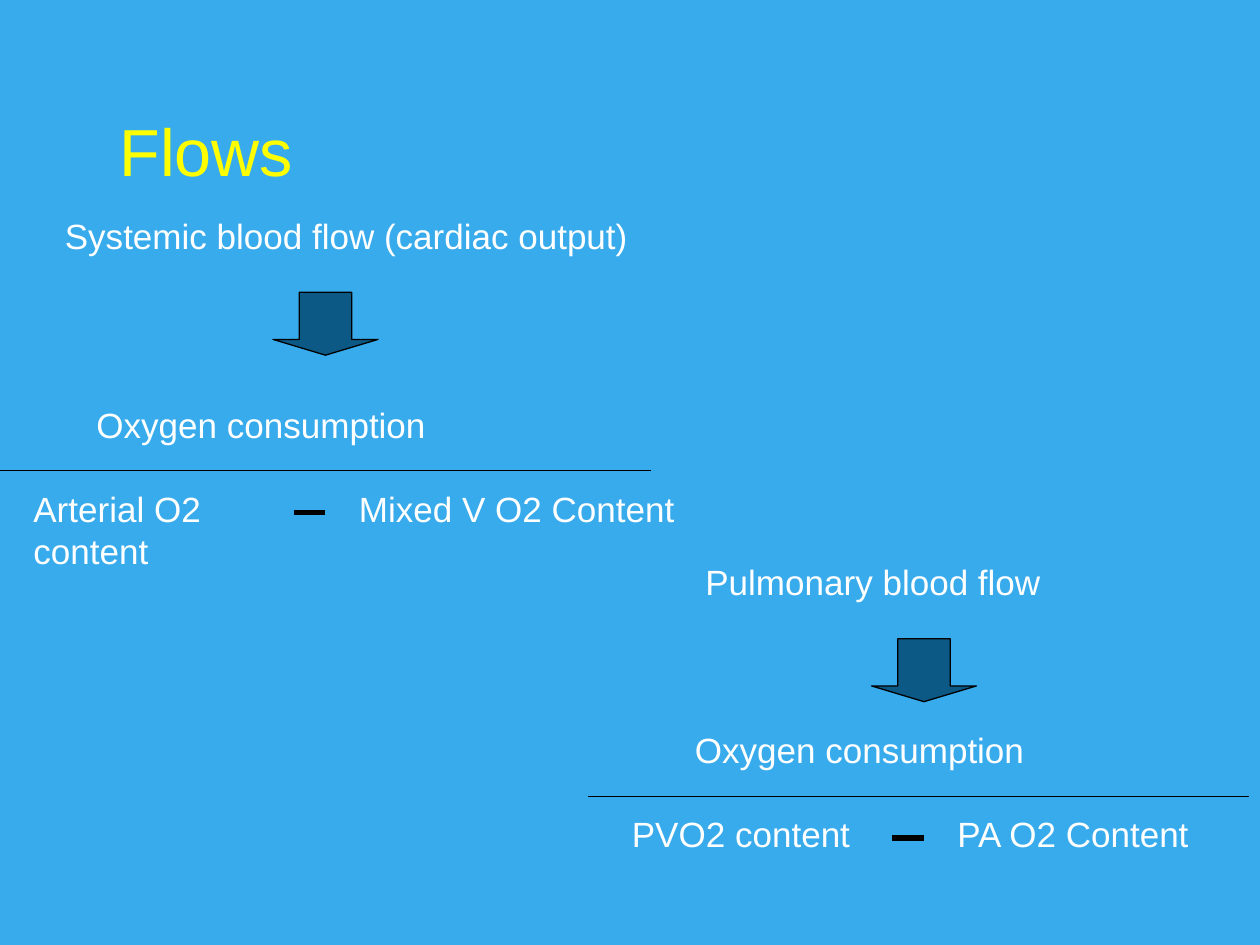
from dataclasses import dataclass

from pptx import Presentation
from pptx import util as u
from pptx.dml.color import RGBColor
from pptx.enum import shapes, text
from pptx.oxml.ns import qn
from pptx.slide import Slide
from lxml import etree

COLOURS = {
    "background": "38ABED",
    "title": "FFFF00",
    "body": "FFFFFF",
    "arrow": "0C5986",
    "line": "000000",
}
LABEL_HEIGHT = 31


@dataclass
class Flow:
    """A flow heading above its fraction; lengths are in points."""
    heading: str
    heading_left: float
    heading_top: float
    heading_width: float
    bar_left: float
    bar_top: float
    minuend: str
    subtrahend: str
    minuend_lines: int = 1


FLOWS = [
    Flow("Pulmonary blood flow", 396, 316.8, 288, 336, 455,
         "PVO2 content", "PA O2 Content"),
    Flow("Systemic blood flow (cardiac output)", 30, 118.8, 360, -6, 268.8,
         "Arterial O2 content", "Mixed V O2 Content", 2),
]


def colour(name: str) -> RGBColor:
    return RGBColor.from_string(COLOURS[name])


def add_label(page: Slide, words: str, left: float, top: float, width: float,
              height: float = LABEL_HEIGHT, size: float = 20,
              ink: str = "body", anchor=text.MSO_ANCHOR.TOP) -> None:
    box = page.shapes.add_textbox(u.Pt(left), u.Pt(top), u.Pt(width), u.Pt(height))
    frame = box.text_frame
    for key, value in {"word_wrap": True, "vertical_anchor": anchor}.items():
        setattr(frame, key, value)
    span = frame.paragraphs[0].add_run()
    span.text = words
    for key, value in {"name": "Arial", "size": u.Pt(size)}.items():
        setattr(span.font, key, value)
    span.font.color.rgb = colour(ink)


def add_rule(page: Slide, left: float, top: float, length: float,
             weight: float) -> None:
    rule = page.shapes.add_connector(
        shapes.MSO_CONNECTOR.STRAIGHT,
        u.Pt(left), u.Pt(top), u.Pt(left + length), u.Pt(top))
    rule.line.color.rgb = colour("line")
    rule.line.width = u.Pt(weight)
    etree.SubElement(rule._element.spPr, qn("a:effectLst"))


def add_arrow(page: Slide, left: float, top: float) -> None:
    arrow = page.shapes.add_shape(
        shapes.MSO_SHAPE.DOWN_ARROW, u.Pt(left), u.Pt(top), u.Pt(60), u.Pt(36))
    arrow.shadow.inherit = False
    arrow.adjustments[0] = 0.5
    arrow.adjustments[1] = 0.25
    arrow.fill.solid()
    arrow.fill.fore_color.rgb = colour("arrow")
    arrow.line.color.rgb = colour("line")
    arrow.line.width = u.Pt(0.75)


def add_flow(page: Slide, flow: Flow) -> None:
    left, top = flow.bar_left, flow.bar_top
    # Heading and the arrow below it
    add_arrow(page, left + 162, flow.heading_top + 48.2)
    add_label(page, flow.heading, flow.heading_left, flow.heading_top,
              flow.heading_width)
    # Numerator and fraction bar
    add_label(page, "Oxygen consumption", left + 54, top - 42, 240)
    add_rule(page, left, top, 378, 0.75)
    # Denominator: a difference with a drawn minus sign
    add_label(page, flow.minuend, left + 18, top + 6, 156,
              LABEL_HEIGHT + 24 * (flow.minuend_lines - 1))
    add_rule(page, left + 174, top + 24, 18, 3.25)
    add_label(page, flow.subtrahend, left + 204, top + 6, 204)


def main() -> None:
    deck = Presentation()
    deck.slide_width, deck.slide_height = u.Pt(720), u.Pt(540)
    page = deck.slides.add_slide(deck.slide_layouts[6])
    page.background.fill.solid()
    page.background.fill.fore_color.rgb = colour("background")

    # Title
    add_label(page, "Flows", 61.2, 30.2, 597, 82, 38, "title",
              text.MSO_ANCHOR.BOTTOM)

    # Pulmonary and systemic flow formulas
    for flow in FLOWS:
        add_flow(page, flow)
    deck.save("out.pptx")


if __name__ == "__main__":
    main()
